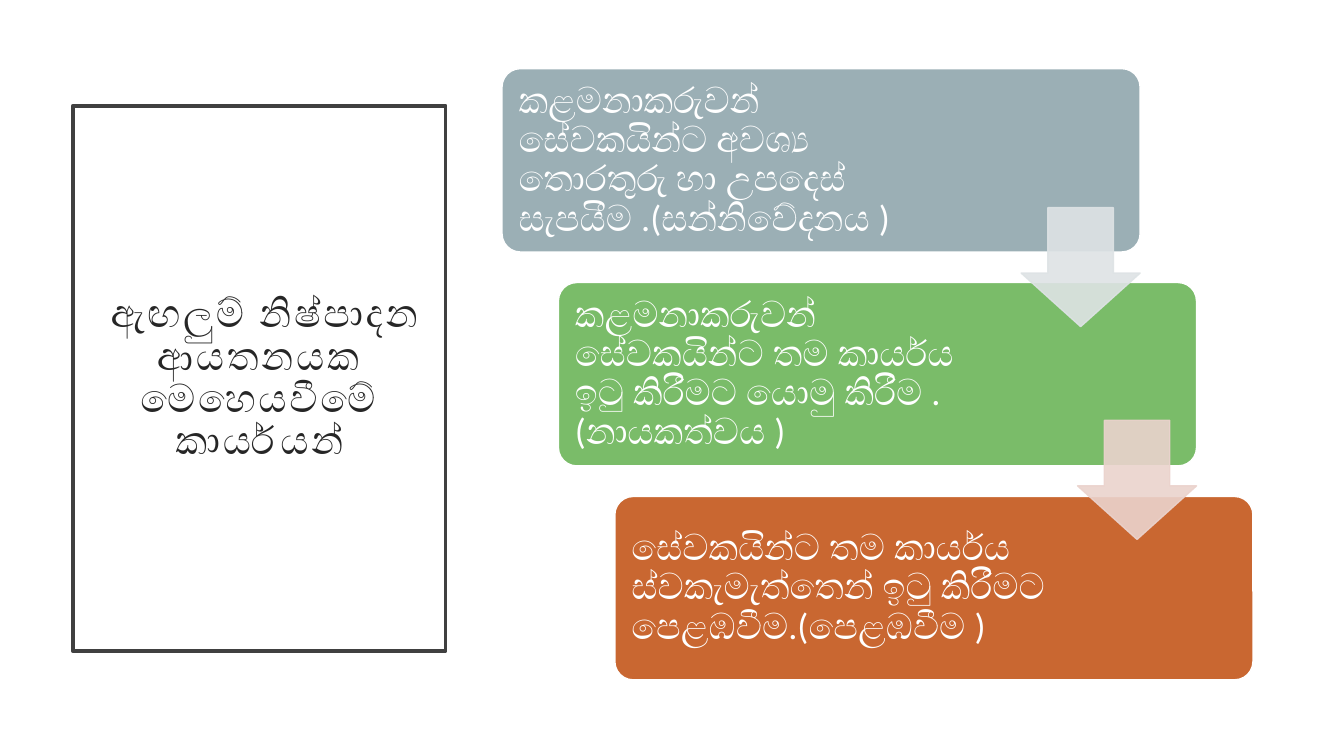
from lxml import etree
from pptx import Presentation
from pptx.dml.color import RGBColor
from pptx.enum.shapes import MSO_SHAPE
from pptx.enum.text import MSO_ANCHOR, MSO_AUTO_SIZE, PP_ALIGN
from pptx.oxml.ns import qn
from pptx.util import Pt

ROUNDED = MSO_SHAPE.ROUNDED_RECTANGLE
DOWN_ARROW = MSO_SHAPE.DOWN_ARROW
MIDDLE = MSO_ANCHOR.MIDDLE
NO_AUTOFIT = MSO_AUTO_SIZE.NONE
LEFT, CENTER = PP_ALIGN.LEFT, PP_ALIGN.CENTER

JOINER = chr(0x200D)  # zero-width joiner, forms the Sinhala conjunct
STEP_X, STEP_Y = 40.3, 152.8
STEPS = [
    ("9BAFB5", 141.6,
     f"කළමනාකරුවන් සේවකයින්ට අවශ්{JOINER}ය තොරතුරු හා උපදෙස් සැපයීම .(සන්නිවේදනය )"),
    ("7ABC69", 133, "කළමනාකරුවන් සේවකයින්ට තම කාර්යය ඉටු කිරීමට යොමු කිරීම .(නායකත්වය )"),
    ("C96731", 133, "සේවකයින්ට තම කාර්යය ස්වකැමැත්තෙන් ඉටු කිරීමට පෙළඹවීම.(පෙළඹවීම )"),
]
ARROW_COLORS = ["DEE3E5", "EBD3CD"]


def paint(shape, fill, line, width):
    shape.fill.solid()
    shape.fill.fore_color.rgb = RGBColor.from_string(fill)
    shape.line.color.rgb = RGBColor.from_string(line)
    shape.line.width = Pt(width)


def write(shape, text, size, color, align, margins):
    """Fill the shape with one paragraph; margins are left, top, right, bottom."""
    frame = shape.text_frame
    frame.text = text
    frame.word_wrap = True
    frame.auto_size = NO_AUTOFIT
    frame.vertical_anchor = MIDDLE
    (frame.margin_left, frame.margin_top,
     frame.margin_right, frame.margin_bottom) = map(Pt, margins)
    paragraph = frame.paragraphs[0]
    paragraph.alignment = align
    paragraph.line_spacing = 0.9
    font = paragraph.runs[0].font
    font.name = "Calibri"
    font.size = Pt(size)
    font.color.rgb = RGBColor.from_string(color)


presentation = Presentation()
presentation.slide_width = Pt(960)
presentation.slide_height = Pt(540)
slide = presentation.slides.add_slide(presentation.slide_layouts[5])

# Framed title
title = slide.shapes.title
title.left, title.top, title.width, title.height = map(Pt, (52, 75.6, 266.4, 389.5))
paint(title, "FFFFFF", "404040", 2.5)
write(title, " ඇඟලුම් නිෂ්පාදන ආයතනයක මෙහෙයවීමේ කාර්යයන්", 28, "262626", CENTER, [14.4] * 4)
title_run = title.text_frame.paragraphs[0].runs[0]
title_run.font._element.set("spc", "200")

# Staggered steps
for index, (color, right_margin, text) in enumerate(STEPS):
    step = slide.shapes.add_shape(
        ROUNDED, Pt(358.6 + index * STEP_X), Pt(49 + index * STEP_Y), Pt(455.8), Pt(131))
    step.adjustments[0] = 0.1
    step.shadow.inherit = False
    paint(step, color, "FFFFFF", 1)
    write(step, text, 26, "FFFFFF", LEFT, (8, 8, right_margin, 8))

# Translucent arrows between the steps
for index, color in enumerate(ARROW_COLORS):
    arrow = slide.shapes.add_shape(
        DOWN_ARROW, Pt(729.4 + index * STEP_X), Pt(148.3 + index * 152), Pt(85), Pt(85))
    arrow.adjustments[0] = 0.55
    arrow.adjustments[1] = 0.45
    arrow.shadow.inherit = False
    paint(arrow, color, color, 1)
    for color_element in arrow._element.spPr.iter(qn("a:srgbClr")):
        etree.SubElement(color_element, qn("a:alpha"), val="90000")

presentation.save("out.pptx")
